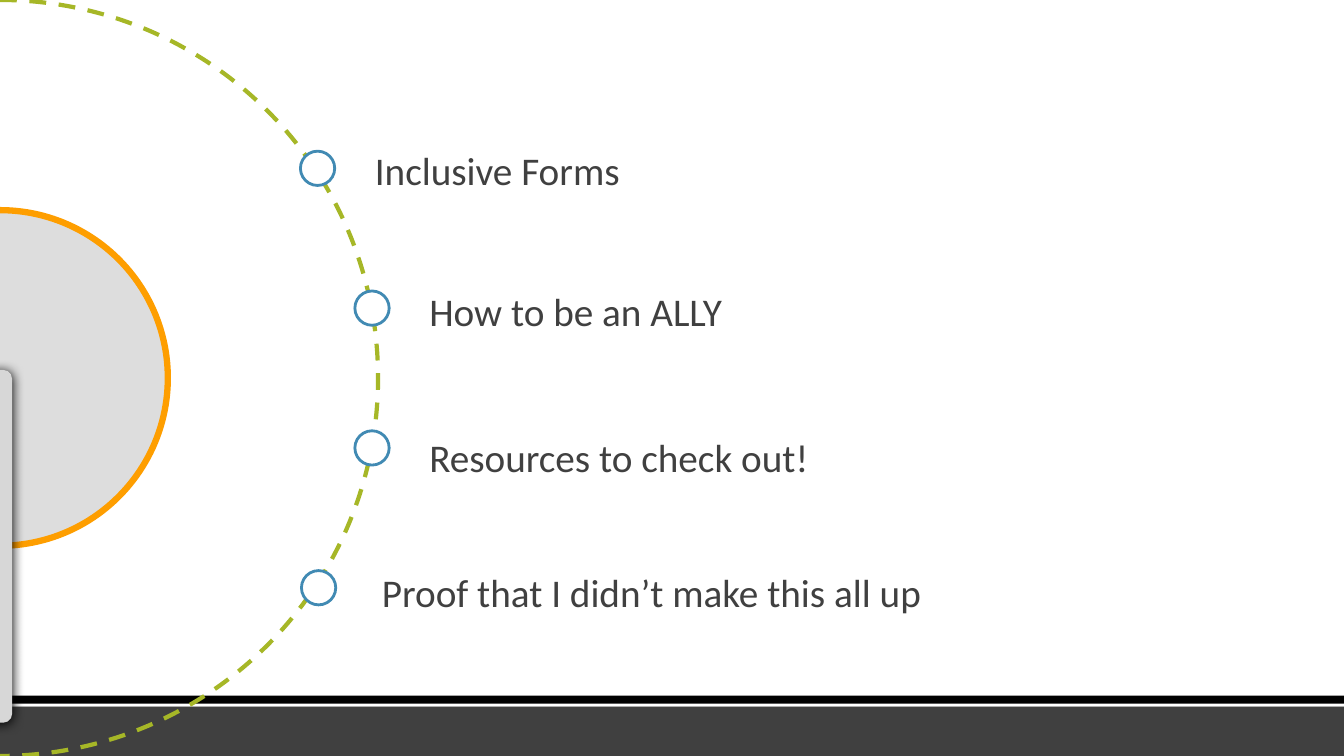
from lxml import etree
from pptx import Presentation
from pptx.dml.color import RGBColor
from pptx.enum.dml import MSO_LINE
from pptx.enum.shapes import MSO_SHAPE
from pptx.enum.text import MSO_ANCHOR, MSO_AUTO_SIZE
from pptx.util import Inches, Pt

RECT, ARC = MSO_SHAPE.RECTANGLE, MSO_SHAPE.ARC
OVAL, ROUNDED = MSO_SHAPE.OVAL, MSO_SHAPE.ROUNDED_RECTANGLE
DASH = MSO_LINE.DASH
MIDDLE = MSO_ANCHOR.MIDDLE
GROW = MSO_AUTO_SIZE.SHAPE_TO_FIT_TEXT

SLIDE_W, SLIDE_H = 13.33, 7.5
DARK = "404040"
DOT_SIZE, DOT_TOP, DOT_STEP = 0.34, 1.5, 1.387

# text, dot left, text left, text top
AGENDA = [
    ("Inclusive Forms", 2.98, 3.62, 1.4),
    ("How to be an ALLY", 3.52, 4.16, 2.8),
    ("Resources to check out!", 3.52, 4.16, 4.25),
    ("Proof that I didn’t make this all up", 2.99, 3.69, 5.59),
]

SHADOW = (
    '<a:effectLst xmlns:a="http://schemas.openxmlformats.org/drawingml/2006/main">'
    '<a:outerShdw blurRad="107950" dist="12700" dir="5400000" algn="ctr">'
    '<a:srgbClr val="000000"/></a:outerShdw></a:effectLst>'
)


def rgb(value):
    return RGBColor.from_string(value)


def add_shape(s, kind, left, top, width, height, fill=None, line=None, weight=1):
    sp = s.shapes.add_shape(kind, Inches(left), Inches(top), Inches(width), Inches(height))
    sp.shadow.inherit = False
    if fill:
        sp.fill.solid()
        sp.fill.fore_color.rgb = rgb(fill)
    else:
        sp.fill.background()
    if line:
        sp.line.color.rgb = rgb(line)
        sp.line.width = Pt(weight)
    else:
        sp.line.fill.background()
    return sp


def add_half_circle(s, diameter, fill, line, weight):
    """Right half of a circle centred on the slide's left edge."""
    sp = add_shape(s, ARC, -diameter / 2, (SLIDE_H - diameter) / 2,
                   diameter, diameter, fill, line, weight)
    sp.adjustments[0] = 162
    sp.adjustments[1] = 54
    return sp


def add_label(s, text, left, top):
    tf = s.shapes.add_textbox(Inches(left), Inches(top), Inches(8), Inches(0.57)).text_frame
    tf.word_wrap = True
    tf.auto_size = GROW
    tf.vertical_anchor = MIDDLE
    p = tf.paragraphs[0]
    p.text = text
    p.font.name = "Calibri"
    p.font.size = Pt(28)
    p.font.color.rgb = rgb(DARK)


def add_side_tab(s):
    sp = add_shape(s, ROUNDED, -0.13, 3.67, 0.25, 3.5, "D7D7D7")
    sp.adjustments[0] = 0.35
    props = sp.fill._xPr
    props.replace(props.effectLst, etree.fromstring(SHADOW))


def main():
    prs = Presentation()
    prs.slide_width, prs.slide_height = Inches(SLIDE_W), Inches(SLIDE_H)
    s = prs.slides.add_slide(prs.slide_layouts[6])

    for top, height, fill in ((7, 0.5, DARK), (6.9, 0.11, "000000"), (6.98, 0.03, "FFFFFF")):
        add_shape(s, RECT, 0, top, SLIDE_W, height, fill)

    add_half_circle(s, 7.5, None, "A6B727", 3).line.dash_style = DASH
    for i, (text, dot_left, text_left, text_top) in enumerate(AGENDA):
        add_label(s, text, text_left, text_top)
        add_shape(s, OVAL, dot_left, DOT_TOP + i * DOT_STEP, DOT_SIZE, DOT_SIZE,
                  "FFFFFF", "418AB3", 2)
    add_half_circle(s, 3.33, "DDDDDD", "FE9E00", 4.5)
    add_side_tab(s)

    prs.save("out.pptx")


if __name__ == "__main__":
    main()
